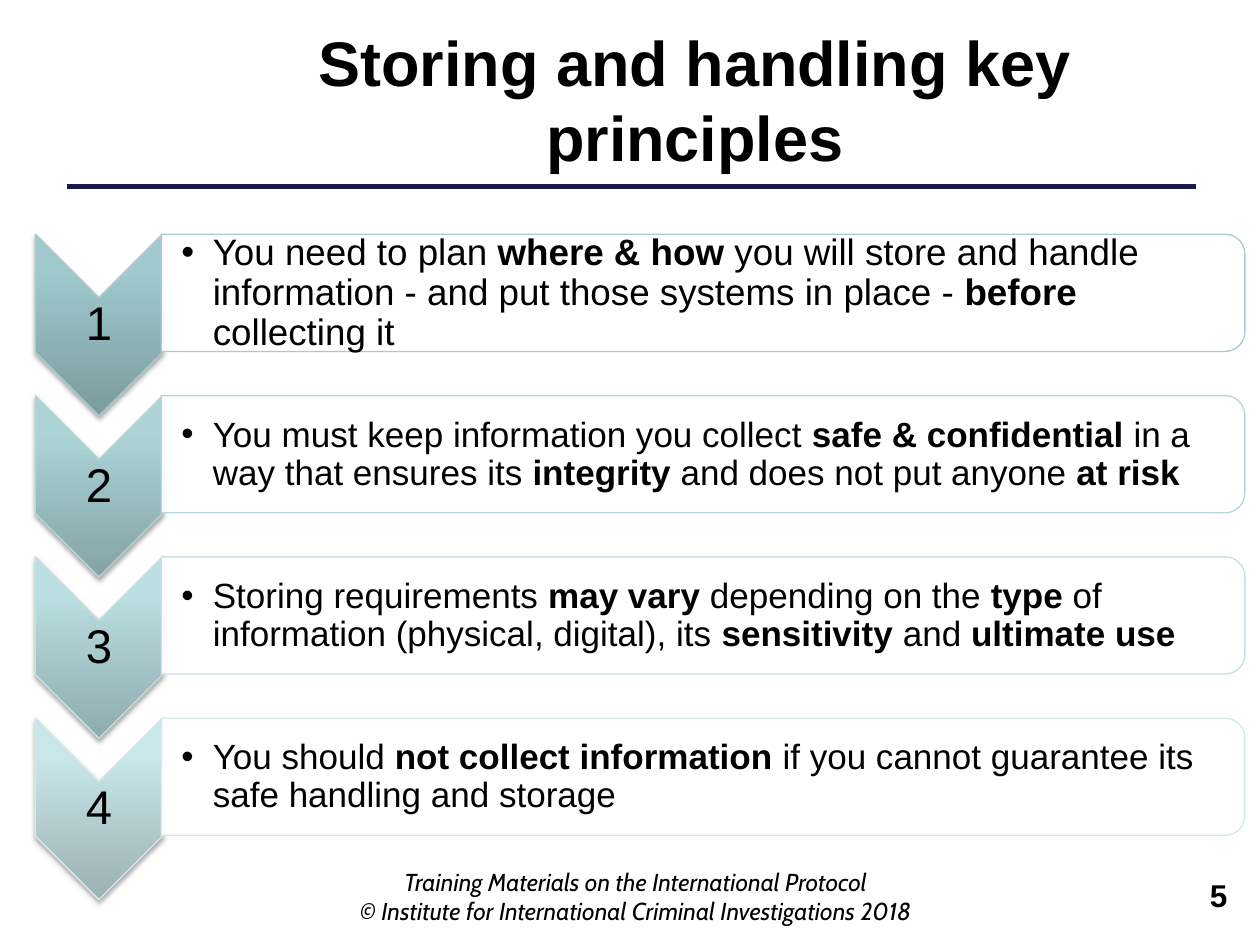
from lxml import etree
from pptx import Presentation
from pptx.dml.color import RGBColor
from pptx.enum.shapes import MSO_CONNECTOR, MSO_SHAPE
from pptx.enum.text import MSO_ANCHOR, PP_ALIGN
from pptx.oxml import parse_xml
from pptx.oxml.ns import nsdecls, qn
from pptx.util import Inches, Pt

CHEVRON = MSO_SHAPE.CHEVRON
ROUNDED_TOP = MSO_SHAPE.ROUND_2_SAME_RECTANGLE
STRAIGHT = MSO_CONNECTOR.STRAIGHT
MIDDLE, TOP = MSO_ANCHOR.MIDDLE, MSO_ANCHOR.TOP
LEFT, CENTER, RIGHT = PP_ALIGN.LEFT, PP_ALIGN.CENTER, PP_ALIGN.RIGHT

BLACK = RGBColor(0x00, 0x00, 0x00)
WHITE = RGBColor(0xFF, 0xFF, 0xFF)
NAVY = RGBColor(0x19, 0x19, 0x4D)

FIRST_TOP = 1.86
ROW_PITCH = 1.28

# fmt: off
PRINCIPLES = [
    (21, RGBColor(0xAA, 0xCB, 0xCE), ("7B9B9E", "9FC9CD", "9FCBCF"),
     ["You need to plan ", "where & how ",
      "you will store and handle information - and put those systems in place - ",
      "before ", "collecting it"]),
    (20, RGBColor(0xB6, 0xD6, 0xD9), ("84A3A6", "ACD4D7", "ACD6D9"),
     ["You must keep information you collect ", "safe & confidential ",
      "in a way that ensures its ", "integrity", " and does not put anyone ", "at risk"]),
    (20, RGBColor(0xC4, 0xE1, 0xE3), ("8FABAD", "BADEE1", "BADFE2"),
     ["Storing requirements ", "may vary ", "depending on the ", "type",
      " of information (physical, digital), its ", "sensitivity", " and ", "ultimate use"]),
    (20, RGBColor(0xD3, 0xEA, 0xEC), ("9BB1B3", "C9E6E8", "C9E8EA"),
     ["You should ", "not collect information ",
      "if you cannot guarantee its safe handling and storage"]),
]
# fmt: on


def style_font(font, size, name="Arial", bold=None, italic=None):
    font.size, font.name = Pt(size), name
    font.bold, font.italic = bold, italic
    font.color.rgb = BLACK


def add_text_frame(slide, box, anchor=TOP, insets=(0.1, 0.05, 0.1, 0.05)):
    frame = slide.shapes.add_textbox(*map(Inches, box)).text_frame
    frame.word_wrap = True
    frame.vertical_anchor = anchor
    frame.margin_left, frame.margin_top, frame.margin_right, frame.margin_bottom = map(
        Inches, insets)
    return frame


def add_rotated_shape(slide, kind, left, top, width, height, outline):
    shape = slide.shapes.add_shape(
        kind, Inches(left + (width - height) / 2), Inches(top + (height - width) / 2),
        Inches(height), Inches(width))
    shape.rotation = 90
    shape.shadow.inherit = False
    shape.line.color.rgb = outline
    shape.line.width = Pt(0.75)
    return shape


def add_chevron(slide, top, outline, shades):
    chevron = add_rotated_shape(slide, CHEVRON, 0.28, top, 1.01, 1.44, outline)
    stops = "".join(
        f'<a:gs pos="{position}"><a:srgbClr val="{shade}"/></a:gs>'
        for position, shade in zip((0, 80000, 100000), shades))
    gradient = parse_xml(
        f'<a:gradFill {nsdecls("a")} rotWithShape="0"><a:gsLst>{stops}</a:gsLst>'
        '<a:lin ang="16200000" scaled="0"/></a:gradFill>')
    properties = chevron._element.spPr
    properties.find(qn("a:prstGeom")).addnext(gradient)
    properties.find(qn("a:effectLst")).append(parse_xml(
        f'<a:outerShdw {nsdecls("a")} blurRad="39370" dist="22860" dir="5400000" '
        'rotWithShape="0"><a:srgbClr val="000000"><a:alpha val="35000"/></a:srgbClr>'
        '</a:outerShdw>'))


def add_panel(slide, top, outline):
    panel = add_rotated_shape(slide, ROUNDED_TOP, 1.28, top, 8.6, 0.93, outline)
    panel.fill.solid()
    panel.fill.fore_color.rgb = WHITE
    color = panel._element.spPr.find(qn("a:solidFill"))[0]
    etree.SubElement(color, qn("a:alpha"), val="90000")


def add_number(slide, top, number):
    frame = add_text_frame(slide, (0.28, top + 0.51, 1.01, 0.43), MIDDLE, (0.02,) * 4)
    paragraph = frame.paragraphs[0]
    paragraph.text = str(number)
    paragraph.alignment = CENTER
    paragraph.line_spacing = 0.9
    style_font(paragraph.font, 27)


def add_statement(slide, top, size, phrases):
    frame = add_text_frame(
        slide, (1.28, top + 0.05, 8.56, 0.84), MIDDLE, (0.16, 0.01, 0.01, 0.01))
    paragraph = frame.paragraphs[0]
    paragraph.level = 1
    paragraph.alignment = LEFT
    paragraph.line_spacing = 0.9
    properties = paragraph._p.get_or_add_pPr()
    properties.set("marL", str(Inches(0.25)))
    properties.set("indent", str(Inches(-0.25)))
    etree.SubElement(properties, qn("a:buFont"), typeface="Arial")
    etree.SubElement(properties, qn("a:buChar"), char="•")
    style_font(paragraph.font, size)
    for index, phrase in enumerate(phrases):
        run = paragraph.add_run()
        run.text = phrase
        run.font.bold = index % 2 == 1


def add_title(slide, text):
    title = slide.shapes.title
    title.left, title.top, title.width, title.height = map(Inches, (1.38, 0.13, 8.27, 1.31))
    title.text_frame.word_wrap = True
    title.text_frame.vertical_anchor = MIDDLE
    paragraph = title.text_frame.paragraphs[0]
    paragraph.text = text
    paragraph.alignment = CENTER
    style_font(paragraph.font, 36, bold=True)


def add_title_rule(slide):
    rule = slide.shapes.add_connector(
        STRAIGHT, Inches(0.53), Inches(1.48), Inches(9.49), Inches(1.48))
    rule.line.color.rgb = NAVY
    rule.line.width = Pt(2.5)
    etree.SubElement(rule._element.spPr, qn("a:effectLst"))


def add_label(slide, box, lines, alignment, **font_style):
    frame = add_text_frame(slide, box)
    frame.text = "\n".join(lines)
    for paragraph in frame.paragraphs:
        paragraph.alignment = alignment
        style_font(paragraph.font, **font_style)


def main():
    deck = Presentation()
    deck.slide_width, deck.slide_height = Inches(10), Inches(7.5)
    slide = deck.slides.add_slide(deck.slide_layouts[5])
    add_title_rule(slide)
    add_title(slide, "Storing and handling key principles")
    add_label(slide, (2.72, 6.83, 4.65, 0.52),
              ["Training Materials on the International Protocol",
               "© Institute for International Criminal Investigations 2018"],
              CENTER, size=14, name="Cabin", italic=True)
    add_label(slide, (7.28, 6.9, 2.56, 0.52), ["5"], RIGHT, size=18, bold=True)
    for index, (size, outline, shades, phrases) in enumerate(PRINCIPLES):
        top = FIRST_TOP + index * ROW_PITCH
        add_chevron(slide, top, outline, shades)
        add_number(slide, top, index + 1)
        add_panel(slide, top, outline)
        add_statement(slide, top, size, phrases)
    deck.save("out.pptx")


if __name__ == "__main__":
    main()
